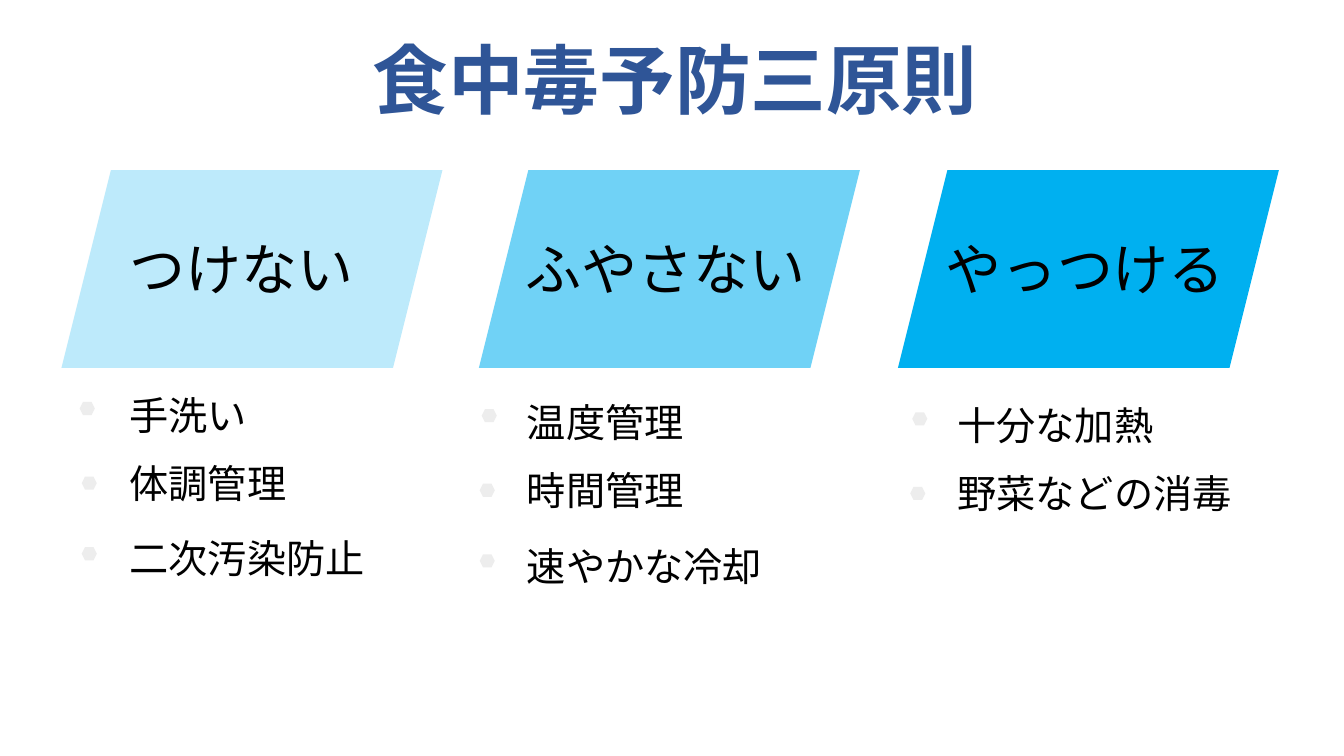
from lxml import etree
from pptx import Presentation
from pptx.dml.color import RGBColor
from pptx.enum.lang import MSO_LANGUAGE_ID as LANG
from pptx.enum.shapes import MSO_SHAPE as SHAPE
from pptx.enum.text import MSO_ANCHOR, MSO_AUTO_SIZE as AUTO, PP_ALIGN
from pptx.oxml.ns import qn
from pptx.util import Cm, Pt

COLORS = {"title": "2F5597", "panel": "00B0F0", "dot": "EDEDED", "text": "000000"}
FONT = "Calibri"

PANEL_TOP, PANEL_W, PANEL_H = 4.29, 9.6, 4.98
HEADING_TOP, HEADING_W, HEADING_H = 5.79, 9.55, 1.96
ITEM_W, ITEM_H = 10.85, 1.45
ITEM_STEPS = (0, 1.72, 3.62)
DOT_STEPS = (0.4, 2.28, 4.06)
DOT_W, DOT_H = 0.38, 0.33

PRINCIPLES = [
    {"heading": "つけない", "panel_x": 1.55, "heading_x": 3.02, "alpha": 26,
     "item_x": 3.02, "top": 9.73, "dot_xs": (2.01, 2.06, 2.06),
     "items": ["手洗い", "体調管理", "二次汚染防止"]},
    {"heading": "ふやさない", "panel_x": 12.07, "heading_x": 13.0, "alpha": 56,
     "item_x": 13.03, "top": 9.91, "dot_xs": (12.14, 12.09, 12.09),
     "items": ["温度管理", "時間管理", "速やかな冷却"]},
    {"heading": "やっつける", "panel_x": 22.63, "heading_x": 23.57, "alpha": 100,
     "item_x": 23.88, "top": 9.99, "dot_xs": (22.99, 22.94),
     "items": ["十分な加熱", "野菜などの消毒"]},
]


def write(tf, text, size, color="text", bold=False, align=None, spacing=None, outline=None):
    tf.word_wrap = True
    p = tf.paragraphs[0]
    p.alignment, p.line_spacing = align, spacing
    r = p.add_run()
    r.text = text
    r.font.name, r.font.size, r.font.bold = FONT, Pt(size), bold
    r.font.language_id = LANG.JAPANESE
    r.font.color.rgb = RGBColor.from_string(COLORS[color])
    if outline:
        ln = etree.Element(qn("a:ln"), w=str(Pt(outline)))
        fill = etree.SubElement(ln, qn("a:solidFill"))
        etree.SubElement(fill, qn("a:srgbClr"), val=COLORS[color])
        r.font._element.insert(0, ln)


def add_text(shapes, text, x, y, w, h, **fmt):
    tf = shapes.add_textbox(Cm(x), Cm(y), Cm(w), Cm(h)).text_frame
    write(tf, text, **fmt)
    tf.auto_size = AUTO.SHAPE_TO_FIT_TEXT


def add_filled(shapes, kind, x, y, w, h, color, alpha=100):
    """Add a borderless shape; alpha is its opacity in percent."""
    sp = shapes.add_shape(kind, Cm(x), Cm(y), Cm(w), Cm(h))
    sp.shadow.inherit = False
    sp.line.fill.background()
    sp.fill.solid()
    sp.fill.fore_color.rgb = RGBColor.from_string(COLORS[color])
    if alpha < 100:
        clr = sp._element.spPr.find(qn("a:solidFill"))[0]
        etree.SubElement(clr, qn("a:alpha"), val=str(alpha * 1000))


def add_title(s, text):
    sp = s.shapes.title
    sp.left, sp.top, sp.width, sp.height = Cm(0.38), Cm(0.56), Cm(33.27), Cm(3.1)
    tf = sp.text_frame
    tf.auto_size = AUTO.NONE
    tf.vertical_anchor = MSO_ANCHOR.MIDDLE
    write(tf, text, size=54, color="title", bold=True, align=PP_ALIGN.CENTER, spacing=0.9)


def add_panel(s, principle):
    shapes = s.shapes.add_group_shape().shapes
    add_filled(shapes, SHAPE.PARALLELOGRAM, principle["panel_x"], PANEL_TOP,
               PANEL_W, PANEL_H, "panel", principle["alpha"])
    add_text(shapes, principle["heading"], principle["heading_x"], HEADING_TOP,
             HEADING_W, HEADING_H, size=40, outline=0.75)


def add_items(s, principle):
    top = principle["top"]
    rows = zip(principle["items"], principle["dot_xs"], ITEM_STEPS, DOT_STEPS)
    for item, dot_x, item_dy, dot_dy in rows:
        add_filled(s.shapes, SHAPE.HEXAGON, dot_x, top + dot_dy, DOT_W, DOT_H, "dot")
        add_text(s.shapes, item, principle["item_x"], top + item_dy, ITEM_W, ITEM_H, size=28)


def main():
    prs = Presentation()
    prs.slide_width, prs.slide_height = Cm(33.87), Cm(19.05)
    s = prs.slides.add_slide(prs.slide_layouts[5])
    add_title(s, "食中毒予防三原則")
    for principle in PRINCIPLES:
        add_panel(s, principle)
        add_items(s, principle)
    prs.save("out.pptx")


if __name__ == "__main__":
    main()
